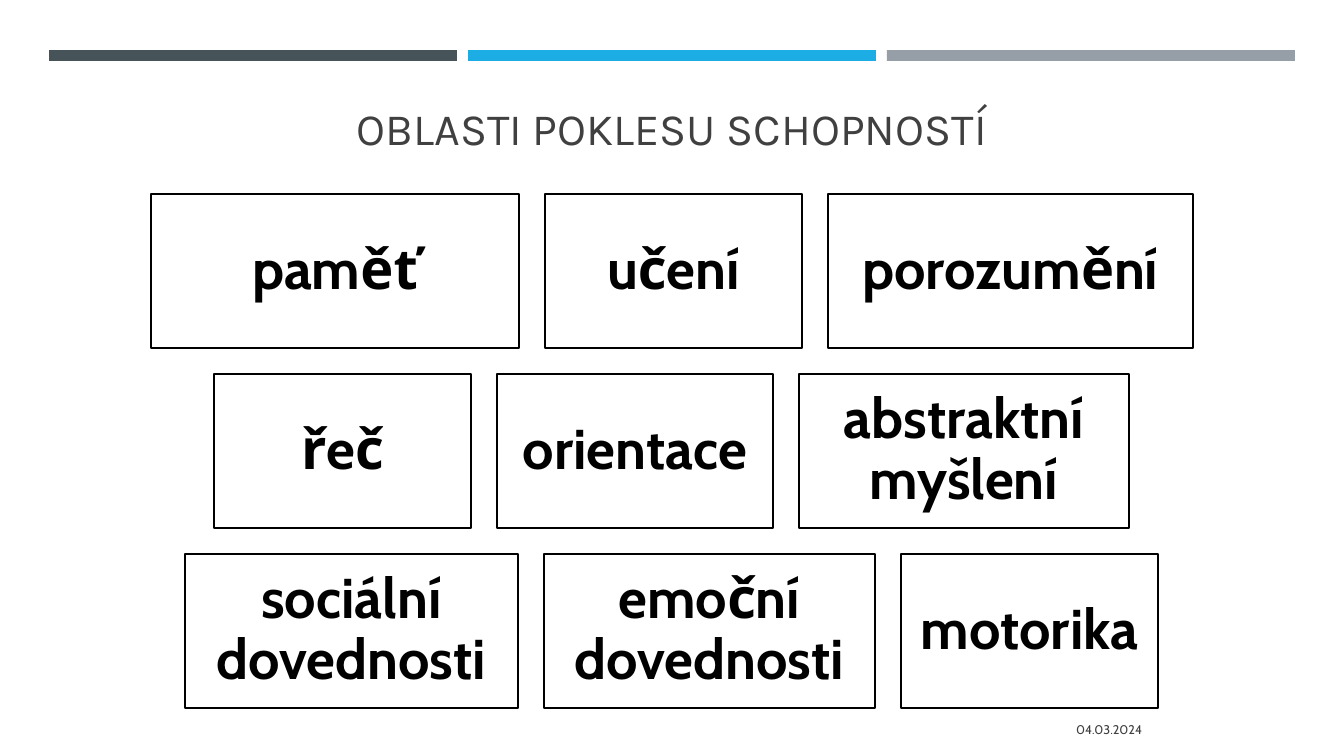
import pptx
import pptx.util
import pptx.dml.color
import pptx.enum.shapes
import pptx.enum.text

EMU_PER_PX = 914400 / 100.8
SLIDE_WIDTH, SLIDE_HEIGHT = 1344, 756
COLORS = {"slate": "465359", "blue": "1CADE4", "gray": "969FA7",
          "text": "404040", "black": "000000"}
ALIGN = pptx.enum.text.PP_ALIGN
ANCHOR = pptx.enum.text.MSO_ANCHOR

deck = pptx.Presentation()
deck.slide_width = round(SLIDE_WIDTH * EMU_PER_PX)
deck.slide_height = round(SLIDE_HEIGHT * EMU_PER_PX)
slide = deck.slides.add_slide(deck.slide_layouts[6])


def add_rect(left, top, width, height):
    rect = slide.shapes.add_shape(
        pptx.enum.shapes.MSO_SHAPE.RECTANGLE,
        *(round(v * EMU_PER_PX) for v in (left, top, width, height)))
    rect.shadow.inherit = False
    rect.fill.background()
    rect.line.fill.background()
    return rect


def write(shape, text, font, size, color, align, anchor, bold=False):
    frame = shape.text_frame
    frame.word_wrap = True
    frame.vertical_anchor = anchor
    paragraph = frame.paragraphs[0]
    paragraph.alignment = align
    run = paragraph.add_run()
    run.text = text
    run.font.name = font
    run.font.size = pptx.util.Pt(size)
    run.font.bold = bold
    run.font.color.rgb = pptx.dml.color.RGBColor.from_string(COLORS[color])
    return paragraph


# Three-colour band
for column, color in enumerate(("slate", "blue", "gray")):
    band = add_rect(49 + 419 * column, 50, 408, 11)
    band.fill.solid()
    band.fill.fore_color.rgb = pptx.dml.color.RGBColor.from_string(COLORS[color])

# Title and date
title = slide.shapes.add_textbox(
    *(round(v * EMU_PER_PX) for v in (64, 78, 1216, 81)))
write(title, "OBLASTI POKLESU SCHOPNOSTÍ", "Karla", 32, "text",
      ALIGN.CENTER, ANCHOR.BOTTOM)
date = slide.shapes.add_textbox(
    *(round(v * EMU_PER_PX) for v in (839, 709, 313, 40)))
write(date, "04.03.2024", "Cabin", 9, "text",
      ALIGN.RIGHT, ANCHOR.MIDDLE).space_after = pptx.util.Pt(6)

# Ability boxes: each row is centred on the slide
ABILITY_ROWS = [
    [("paměť", 368), ("učení", 257), ("porozumění", 365)],
    [("řeč", 257), ("orientace", 276), ("abstraktní myšlení", 330)],
    [("sociální dovednosti", 333), ("emoční dovednosti", 331), ("motorika", 257)],
]
TOP, BOX_HEIGHT, GAP, INSET = 194, 154, 26, 17

for row, abilities in enumerate(ABILITY_ROWS):
    row_width = sum(width for _, width in abilities) + GAP * (len(abilities) - 1)
    left = (SLIDE_WIDTH - row_width) // 2
    for ability, width in abilities:
        box = add_rect(left, TOP + row * (BOX_HEIGHT + GAP), width, BOX_HEIGHT)
        box.line.color.rgb = pptx.dml.color.RGBColor.from_string(COLORS["black"])
        box.line.width = pptx.util.Pt(1.75)
        frame = box.text_frame
        frame.margin_left = frame.margin_right = round(INSET * EMU_PER_PX)
        frame.margin_top = frame.margin_bottom = round(INSET * EMU_PER_PX)
        write(box, ability, "Cabin", 40, "black", ALIGN.CENTER, ANCHOR.MIDDLE,
              bold=True).line_spacing = 0.9
        left += width + GAP

deck.save("out.pptx")
